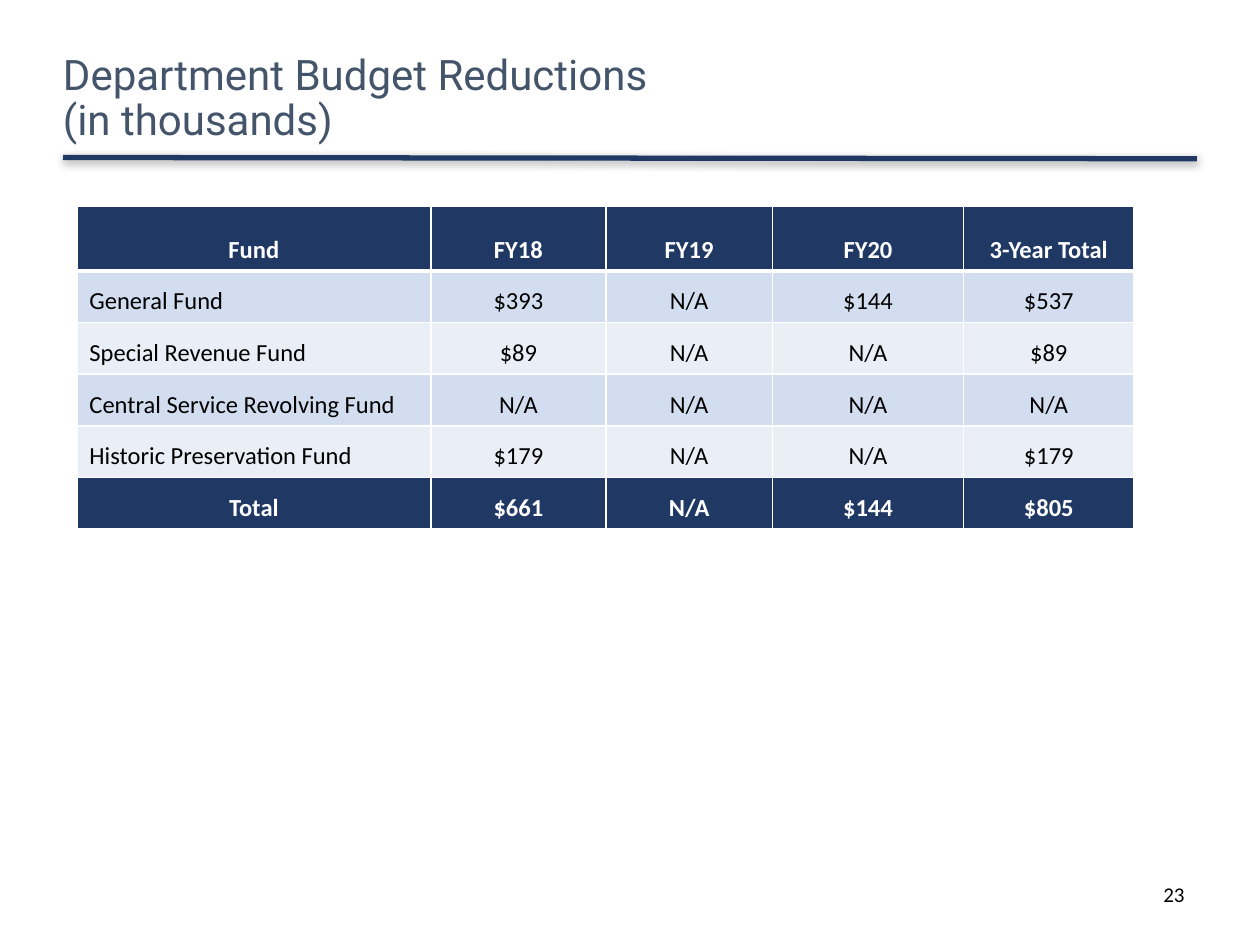
from dataclasses import dataclass

from lxml import etree
from pptx import Presentation
from pptx import util as u
from pptx.dml.color import RGBColor
from pptx.enum import shapes, text
from pptx.oxml import parse_xml
from pptx.oxml.ns import nsdecls, qn
from pptx.util import Inches

LEFT, CENTER, RIGHT = (text.PP_ALIGN.LEFT, text.PP_ALIGN.CENTER,
                       text.PP_ALIGN.RIGHT)


@dataclass(frozen=True)
class Theme:
    navy: str = "203864"
    slate: str = "44546A"
    white: str = "FFFFFF"
    black: str = "000000"
    bands: tuple = ("D2DEEF", "EAEFF7")
    heading_font: str = "Roboto"
    body_font: str = "Calibri"
    title_size: int = 24
    table_size: int = 14
    number_size: int = 12


THEME = Theme()
COLUMN_WIDTHS = (2.81, 1.39, 1.32, 1.52, 1.35)
HEADER_HEIGHT, ROW_HEIGHT = 0.51, 0.41
BUDGET = (
    ("Fund", "FY18", "FY19", "FY20", "3-Year Total"),
    ("General Fund", "$393", "N/A", "$144", "$537"),
    ("Special Revenue Fund", "$89", "N/A", "N/A", "$89"),
    ("Central Service Revolving Fund", "N/A", "N/A", "N/A", "N/A"),
    ("Historic Preservation Fund", "$179", "N/A", "N/A", "$179"),
    ("Total", "$661", "N/A", "$144", "$805"),
)


def write(frame, words, *, size, color, font=THEME.body_font, bold=False,
          align=LEFT, spacing=None):
    """Fill a text frame with one paragraph; newlines become line breaks."""
    para = frame.paragraphs[0]
    para.alignment = align
    if spacing:
        para.line_spacing = spacing
    for index, line in enumerate(words.split("\n")):
        if index:
            para.add_line_break()
        span = para.add_run()
        span.text = line
        span.font.name = font
        span.font.size = u.Pt(size)
        span.font.bold = bold
        span.font.color.rgb = RGBColor.from_string(color)


def add_title(page, left, top, width, height):
    box = page.shapes.add_textbox(*map(Inches, (left, top, width, height)))
    frame = box.text_frame
    frame.word_wrap = True
    frame.vertical_anchor = text.MSO_ANCHOR.MIDDLE
    frame.margin_left = frame.margin_right = 0
    frame.margin_top = frame.margin_bottom = 0
    write(frame, "Department Budget Reductions\n(in thousands)",
          size=THEME.title_size, color=THEME.slate, font=THEME.heading_font,
          spacing=0.9)


def add_title_rule(page, left, top, width, drop):
    rule = page.shapes.add_connector(
        shapes.MSO_CONNECTOR.STRAIGHT,
        *map(Inches, (left, top, left + width, top + drop)))
    rule.line.width = u.Pt(3)
    rule.line.color.rgb = RGBColor.from_string(THEME.navy)
    rule._element.spPr.append(parse_xml(
        f'<a:effectLst {nsdecls("a")}>'
        f'<a:outerShdw blurRad="{u.Pt(5)}" dist="{u.Pt(1.6)}" dir="5400000" '
        f'rotWithShape="0"><a:srgbClr val="{THEME.black}">'
        '<a:alpha val="38000"/></a:srgbClr></a:outerShdw></a:effectLst>'))


def set_borders(cell, bottom):
    """Draw white cell borders; call before the fill, as the schema orders."""
    properties = cell._tc.get_or_add_tcPr()
    for side, points in (("L", 1), ("R", 1), ("T", 1), ("B", bottom)):
        line = etree.SubElement(properties, qn(f"a:ln{side}"),
                                w=str(u.Pt(points)))
        fill = etree.SubElement(line, qn("a:solidFill"))
        etree.SubElement(fill, qn("a:srgbClr"), val=THEME.white)


def add_budget_table(page, left, top):
    heights = [HEADER_HEIGHT] + [ROW_HEIGHT] * (len(BUDGET) - 1)
    table = page.shapes.add_table(
        len(BUDGET), len(COLUMN_WIDTHS), Inches(left), Inches(top),
        Inches(sum(COLUMN_WIDTHS)), Inches(sum(heights))).table
    table.first_row = table.horz_banding = False
    for column, width in zip(table.columns, COLUMN_WIDTHS):
        column.width = Inches(width)
    for r, (values, height) in enumerate(zip(BUDGET, heights)):
        table.rows[r].height = Inches(height)
        strong = r in (0, len(BUDGET) - 1)
        fill = THEME.navy if strong else THEME.bands[(r - 1) % 2]
        for c, value in enumerate(values):
            cell = table.cell(r, c)
            set_borders(cell, bottom=3 if r == 0 else 1)
            cell.fill.solid()
            cell.fill.fore_color.rgb = RGBColor.from_string(fill)
            cell.vertical_anchor = text.MSO_ANCHOR.BOTTOM
            write(cell.text_frame, value, size=THEME.table_size, bold=strong,
                  color=THEME.white if strong else THEME.black,
                  align=CENTER if strong or c else LEFT)


def add_page_number(page, left, top, width, height):
    box = page.shapes.add_textbox(*map(Inches, (left, top, width, height)))
    box.text_frame.word_wrap = True
    write(box.text_frame, "23", size=THEME.number_size, color=THEME.black,
          align=RIGHT)


def main():
    deck = Presentation()
    deck.slide_width, deck.slide_height = Inches(10), Inches(7.5)
    page = deck.slides.add_slide(deck.slide_layouts[6])
    add_title_rule(page, 0.5, 1.25, 9, 0.01)
    add_title(page, 0.5, 0.33, 6.86, 0.92)
    add_page_number(page, 7.17, 6.95, 2.33, 0.4)
    add_budget_table(page, 0.61, 1.64)
    deck.save("out.pptx")


if __name__ == "__main__":
    main()
